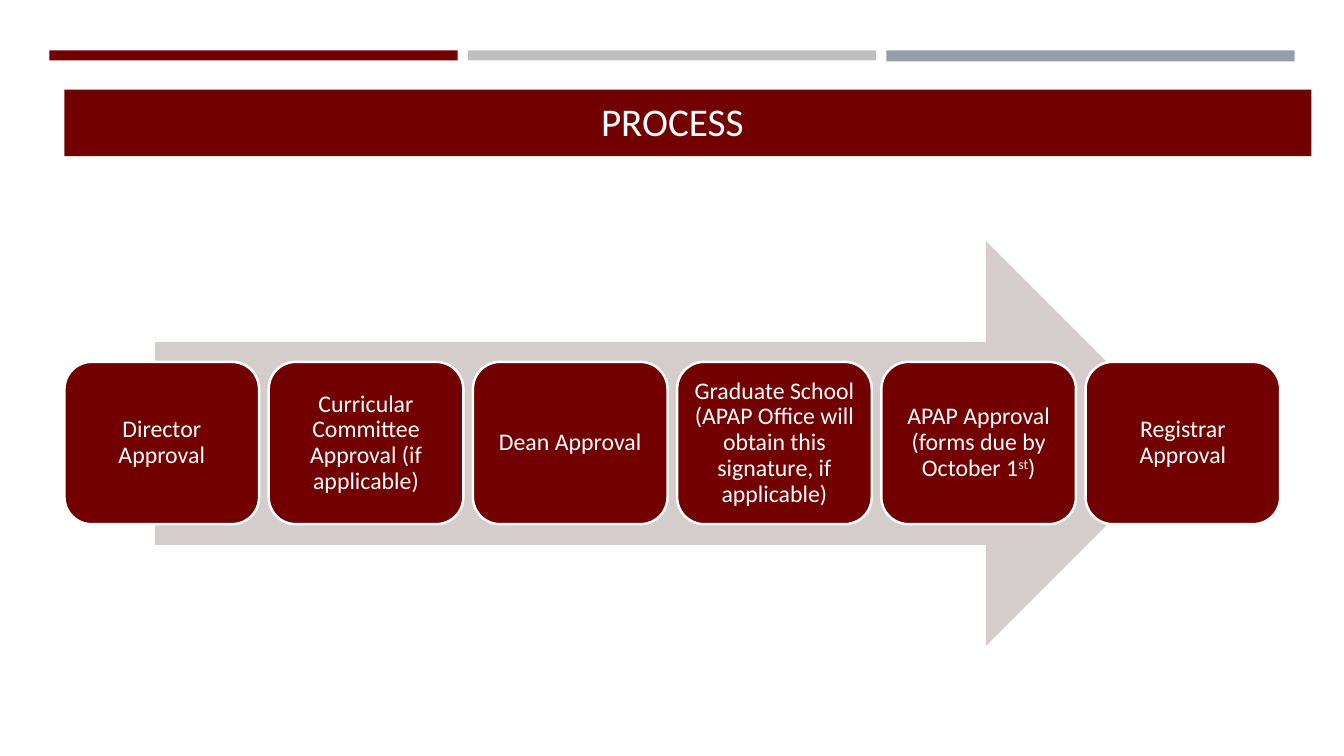
from dataclasses import dataclass

from pptx import Presentation
from pptx.dml.color import RGBColor
from pptx.enum.shapes import MSO_SHAPE as Shape
from pptx.enum.text import MSO_ANCHOR as Anchor, PP_ALIGN as Align
from pptx.util import Pt


@dataclass(frozen=True)
class Theme:
    maroon: str = "720000"
    silver: str = "BFBFBF"
    slate: str = "969FA7"
    arrow: str = "D5CCCC"
    white: str = "FFFFFF"
    font: str = "Calibri"
    title_size: float = 28
    step_size: float = 17
    outline: float = 1.75


THEME = Theme()
STEPS = [
    ["Director Approval"],
    ["Curricular Committee Approval (if applicable)"],
    ["Dean Approval"],
    ["Graduate School (APAP Office will obtain this signature, if applicable)"],
    ["APAP Approval (forms due by October 1", "st", ")"],
    ["Registrar Approval"],
]


def add_block(page, kind, left, top, width, height, color):
    block = page.shapes.add_shape(kind, Pt(left), Pt(top), Pt(width), Pt(height))
    block.shadow.inherit = False
    block.fill.solid()
    block.fill.fore_color.rgb = RGBColor.from_string(color)
    block.line.fill.background()
    return block


def write_centred(box, pieces, size, anchor):
    frame = box.text_frame
    frame.word_wrap = True
    frame.vertical_anchor = anchor
    para = frame.paragraphs[0]
    para.alignment = Align.CENTER
    para.font.name = THEME.font
    para.font.size = Pt(size)
    para.font.color.rgb = RGBColor.from_string(THEME.white)
    for index, piece in enumerate(pieces):
        span = para.add_run()
        span.text = piece
        if index == 1:
            span.font._element.set("baseline", "30000")
    return frame


def add_top_bars(page):
    bars = [(THEME.maroon, 7.2), (THEME.silver, 7.2), (THEME.slate, 7.9)]
    for index, (color, height) in enumerate(bars):
        add_block(page, Shape.RECTANGLE, 35.3 + index * 298.9, 36, 291.6, height, color)


def add_title(page, text):
    add_block(page, Shape.RECTANGLE, 46.1, 64.1, 890.6, 47.5, THEME.maroon)
    box = page.shapes.add_textbox(Pt(46.1), Pt(64.1), Pt(868.3), Pt(42.5))
    write_centred(box, [text], THEME.title_size, Anchor.BOTTOM)


def add_step(page, index, pieces):
    step = add_block(page, Shape.ROUNDED_RECTANGLE, 46.1 + index * 145.87, 258.5,
                     139, 115.9, THEME.maroon)
    step.line.color.rgb = RGBColor.from_string(THEME.white)
    step.line.width = Pt(THEME.outline)
    frame = write_centred(step, pieces, THEME.step_size, Anchor.MIDDLE)
    frame.paragraphs[0].line_spacing = 0.9
    frame.margin_left = frame.margin_right = Pt(5)
    frame.margin_top = frame.margin_bottom = Pt(5)


def main():
    deck = Presentation()
    deck.slide_width, deck.slide_height = Pt(960), Pt(540)
    page = deck.slides.add_slide(deck.slide_layouts[6])
    add_top_bars(page)
    add_title(page, "PROCESS")
    add_block(page, Shape.RIGHT_ARROW, 110.9, 172.1, 738, 289.4, THEME.arrow)
    for index, pieces in enumerate(STEPS):
        add_step(page, index, pieces)
    deck.save("out.pptx")


if __name__ == "__main__":
    main()
